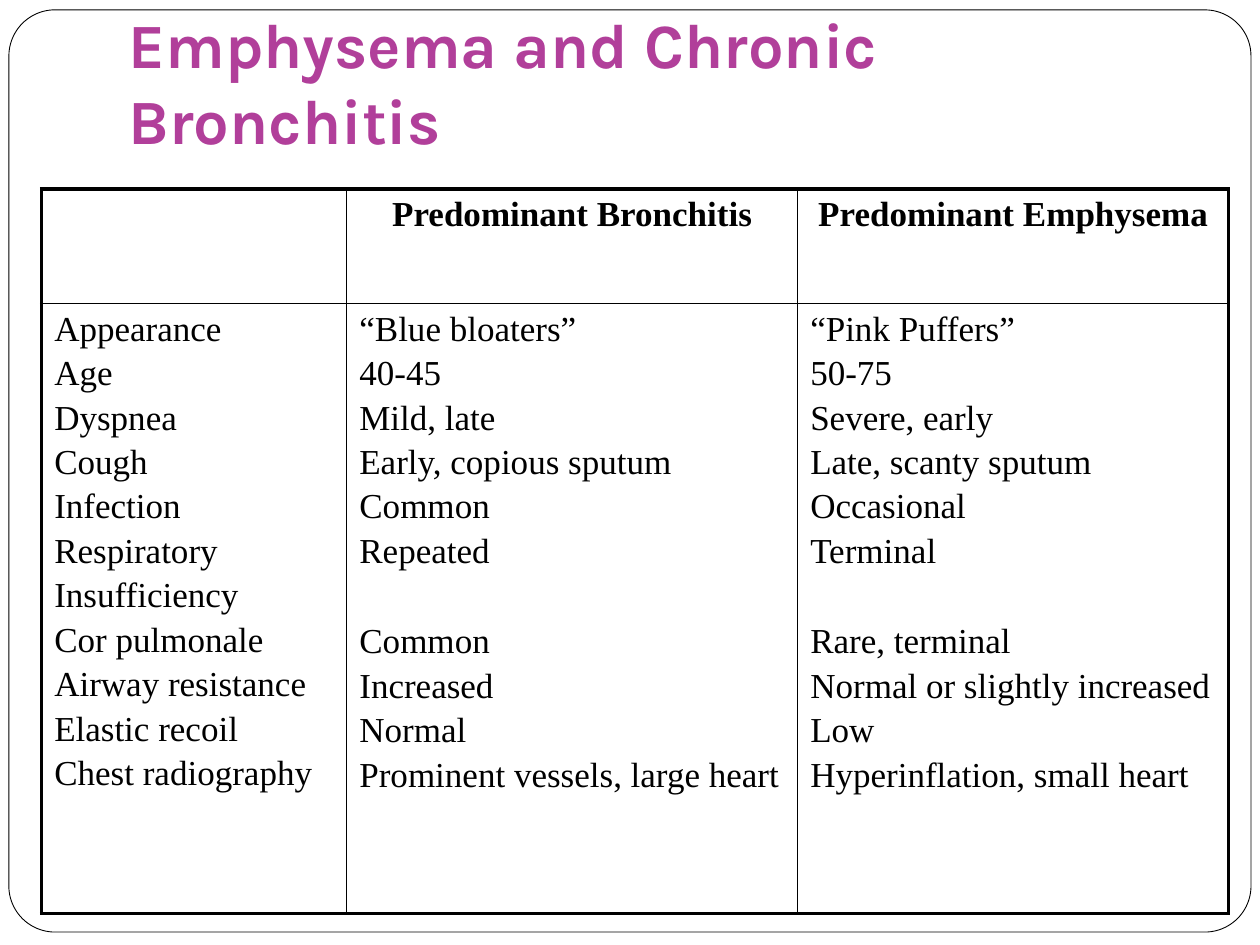
import lxml.etree
import pptx
import pptx.dml.color
import pptx.enum.shapes
import pptx.enum.text
import pptx.oxml.ns
import pptx.util

Cm, Pt = pptx.util.Cm, pptx.util.Pt

TITLE = "Emphysema and Chronic Bronchitis"
HEADERS = ["", "Predominant Bronchitis", "Predominant Emphysema"]
FEATURES = [
    ("Appearance", "“Blue bloaters”", "“Pink Puffers”"),
    ("Age", "40-45", "50-75"),
    ("Dyspnea", "Mild, late", "Severe, early"),
    ("Cough", "Early, copious sputum", "Late, scanty sputum"),
    ("Infection", "Common", "Occasional"),
    ("Respiratory", "Repeated", "Terminal"),
    ("Insufficiency", "", ""),
    ("Cor pulmonale", "Common", "Rare, terminal"),
    ("Airway resistance", "Increased", "Normal or slightly increased"),
    ("Elastic recoil", "Normal", "Low"),
    ("Chest radiography", "Prominent vessels, large heart", "Hyperinflation, small heart"),
]
COLORS = {"title": "B13F9A", "text": "000000", "line": "000000", "paper": "FFFFFF"}
COL_WIDTHS = [6.15, 9.09, 8.69]
ROW_HEIGHTS = [2.31, 12.29]
OUTER, INNER = 2.25, 1
GAP, LINE_PITCH = 3.2, 26.2


def rgb(name):
    return pptx.dml.color.RGBColor.from_string(COLORS[name])


def add_run(p, text, font, size, color, bold):
    r = p.add_run()
    r.text = text
    r.font.name = font
    r.font.size = Pt(size)
    r.font.bold = bold
    r.font.color.rgb = rgb(color)


def set_borders(cell, widths):
    tc_pr = cell._tc.get_or_add_tcPr()
    qn = pptx.oxml.ns.qn
    for i, (side, width) in enumerate(widths.items()):
        ln = lxml.etree.Element(qn("a:ln" + side), w=str(Pt(width)))
        fill = lxml.etree.SubElement(ln, qn("a:solidFill"))
        lxml.etree.SubElement(fill, qn("a:srgbClr"), val=COLORS["line"])
        tc_pr.insert(i, ln)


def fill_cell(cell, lines, bold, align):
    tf = cell.text_frame
    p, space = tf.paragraphs[0], 0
    for text in lines:
        if not text:
            space += LINE_PITCH
            continue
        if p.runs:
            p = tf.add_paragraph()
            p.space_before = Pt(space)
        p.alignment = align
        add_run(p, text, "Times New Roman", 20, "text", bold)
        space = GAP


prs = pptx.Presentation()
prs.slide_width, prs.slide_height = Cm(25.4), Cm(19.05)
s = prs.slides.add_slide(prs.slide_layouts[6])

frame = s.shapes.add_shape(pptx.enum.shapes.MSO_SHAPE.ROUNDED_RECTANGLE,
                           Cm(0.18), Cm(0.2), Cm(25.04), Cm(18.59))
frame.adjustments[0] = 0.05
frame.shadow.inherit = False
frame.fill.solid()
frame.fill.fore_color.rgb = rgb("paper")
frame.line.color.rgb = rgb("line")
frame.line.width = Pt(0.5)

title = s.shapes.add_textbox(Cm(2.34), Cm(1.07), Cm(21.59), Cm(2.34))
tf = title.text_frame
tf.word_wrap = True
tf.vertical_anchor = pptx.enum.text.MSO_ANCHOR.BOTTOM
tf.margin_bottom = Cm(0.25)
add_run(tf.paragraphs[0], TITLE, "Karla", 36, "title", True)

table = s.shapes.add_table(len(ROW_HEIGHTS), len(COL_WIDTHS), Cm(0.84), Cm(3.81),
                           Cm(sum(COL_WIDTHS)), Cm(sum(ROW_HEIGHTS))).table
table.first_row = table.horz_banding = False
for col, width in zip(table.columns, COL_WIDTHS):
    col.width = Cm(width)
for row, height in zip(table.rows, ROW_HEIGHTS):
    row.height = Cm(height)

last_row, last_col = len(ROW_HEIGHTS) - 1, len(COL_WIDTHS) - 1
for j, (header, values) in enumerate(zip(HEADERS, zip(*FEATURES))):
    fill_cell(table.cell(0, j), [header], True, pptx.enum.text.PP_ALIGN.CENTER)
    fill_cell(table.cell(1, j), values, False, pptx.enum.text.PP_ALIGN.LEFT)
    for i in range(last_row + 1):
        cell = table.cell(i, j)
        cell.fill.background()
        set_borders(cell, {
            "L": OUTER if j == 0 else INNER,
            "R": OUTER if j == last_col else INNER,
            "T": OUTER if i == 0 else INNER,
            "B": OUTER if i == last_row else INNER,
        })

prs.save("out.pptx")
